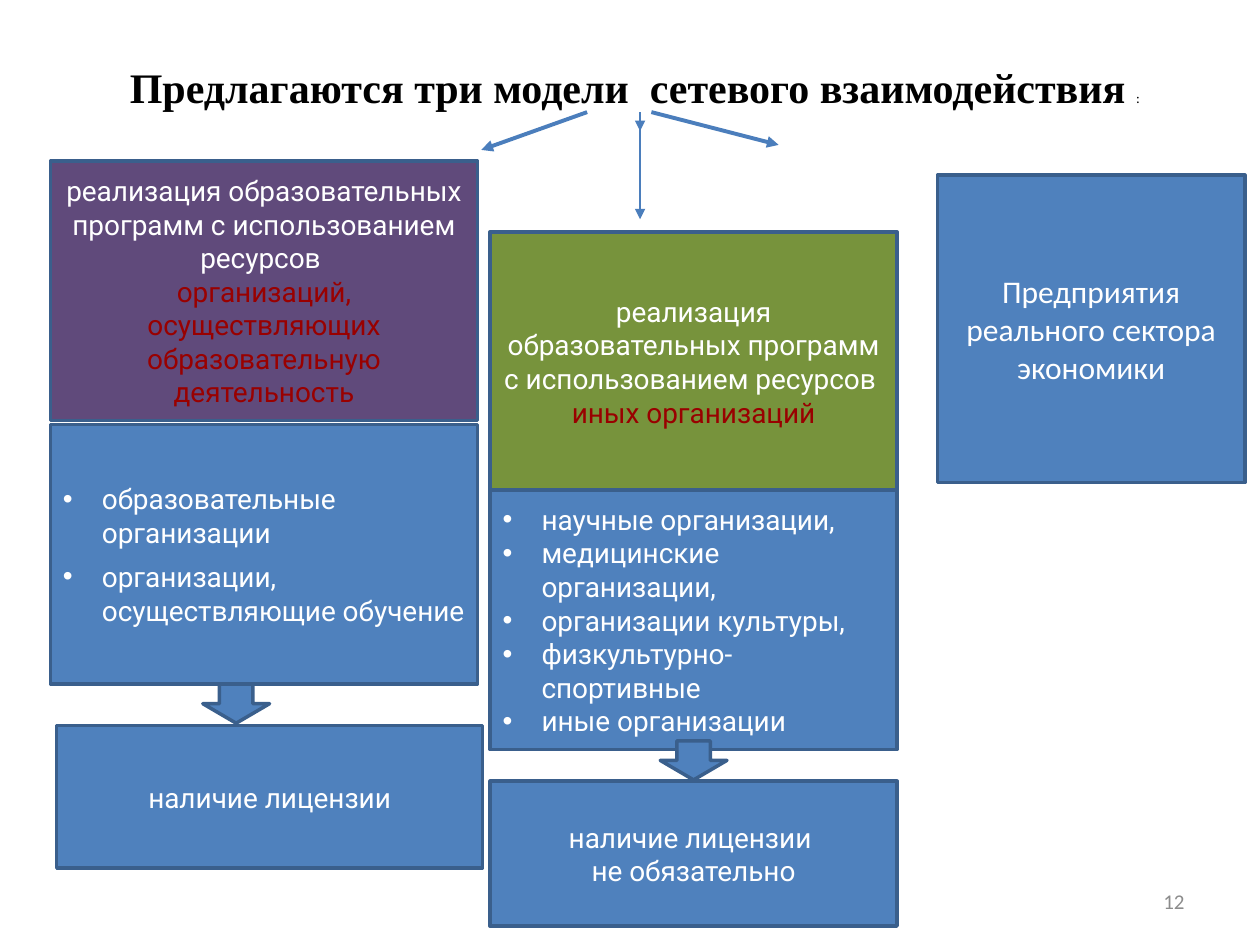
from dataclasses import dataclass

from lxml.etree import SubElement
from pptx import Presentation
from pptx.dml.color import RGBColor
from pptx.enum.shapes import MSO_CONNECTOR, MSO_SHAPE
from pptx.enum.text import MSO_ANCHOR, MSO_AUTO_SIZE, PP_ALIGN
from pptx.oxml.ns import qn
from pptx.util import Inches, Pt

COLS, ROWS = 100, 75
BLUE, EDGE, WIRE = "4F81BD", "3A5F8C", "4B7EBC"
WHITE, RED, BLACK, GREY = "FFFFFF", "990000", "000000", "8C8C8C"

deck = Presentation()
deck.slide_width, deck.slide_height = Inches(10), Inches(7.5)
slide = deck.slides.add_slide(deck.slide_layouts[5])
shapes = slide.shapes


@dataclass
class Run:
    text: str
    color: str = WHITE
    size: float = 16
    font: str = "Roboto"
    bold: bool = False


@dataclass
class Box:
    """A filled shape; place is left, top, width and height in grid cells."""
    place: tuple
    lines: tuple = ()
    fill: str = BLUE
    kind: MSO_SHAPE = MSO_SHAPE.RECTANGLE
    bullets: bool = False
    gap: float = 0


@dataclass
class Arrow:
    start: tuple
    end: tuple
    width: float


def tint(code: str) -> RGBColor:
    return RGBColor.from_string(code)


def grid(*cells: float) -> list:
    """Turn alternating column and row counts into lengths."""
    units = (deck.slide_width / COLS, deck.slide_height / ROWS)
    return [round(n * units[i % 2]) for i, n in enumerate(cells)]


def write(para, run: Run) -> None:
    part = para.add_run()
    part.text = run.text
    font = part.font
    font.name, font.size, font.bold = run.font, Pt(run.size), run.bold
    font.color.rgb = tint(run.color)


def bullet(para) -> None:
    props = para._p.get_or_add_pPr()
    indent = Inches(0.31)
    props.set("marL", str(indent))
    props.set("indent", str(-indent))
    SubElement(props, qn("a:buFont")).set("typeface", "Arial")
    SubElement(props, qn("a:buChar")).set("char", "•")


def draw_box(box: Box) -> None:
    shape = shapes.add_shape(box.kind, *grid(*box.place))
    shape.shadow.inherit = False
    shape.fill.solid()
    shape.fill.fore_color.rgb = tint(box.fill)
    shape.line.color.rgb = tint(EDGE)
    shape.line.width = Pt(2)
    frame = shape.text_frame
    frame.word_wrap = True
    frame.vertical_anchor = MSO_ANCHOR.MIDDLE
    for i, run in enumerate(box.lines):
        para = frame.add_paragraph() if i else frame.paragraphs[0]
        para.alignment = PP_ALIGN.LEFT if box.bullets else PP_ALIGN.CENTER
        if box.gap and i < len(box.lines) - 1:
            para.space_after = Pt(box.gap)
        if box.bullets:
            bullet(para)
        write(para, run)


def draw_arrow(arrow: Arrow) -> None:
    line = shapes.add_connector(
        MSO_CONNECTOR.STRAIGHT, *grid(*arrow.start, *arrow.end))
    line.line.color.rgb = tint(WIRE)
    line.line.width = Pt(arrow.width)
    SubElement(line.line._get_or_add_ln(), qn("a:tailEnd")).set("type", "triangle")
    SubElement(line._element.spPr, qn("a:effectLst"))


def draw_title() -> None:
    title = shapes.title
    title.left, title.top, title.width, title.height = grid(9.3, 2.1, 87.4, 6.5)
    frame = title.text_frame
    frame.auto_size = MSO_AUTO_SIZE.NONE
    frame.word_wrap = True
    frame.vertical_anchor = MSO_ANCHOR.TOP
    frame.margin_top = Inches(0.28)
    para = frame.paragraphs[0]
    para.alignment = PP_ALIGN.LEFT
    write(para, Run("Предлагаются три модели  сетевого взаимодействия ",
                    BLACK, 24, "Times New Roman", True))
    write(para, Run(":", BLACK, 8, "Calibri"))


def draw_page() -> None:
    frame = shapes.add_textbox(*grid(71.7, 69.5, 23.3, 4)).text_frame
    frame.word_wrap = True
    frame.vertical_anchor = MSO_ANCHOR.MIDDLE
    para = frame.paragraphs[0]
    para.alignment = PP_ALIGN.RIGHT
    write(para, Run("12", GREY, 12, "Calibri"))


LEFT, LWIDE = 4, 33.9
MID, MWIDE = 38.9, 32.3
TALL = 20.6
USE = "реализация образовательных программ с использованием ресурсов "
DOWN = MSO_SHAPE.DOWN_ARROW

BOXES = (
    Box((LEFT, 12.8, LWIDE, TALL),
        (Run(USE), Run("организаций, осуществляющих образовательную деятельность", RED)),
        "604A7B"),
    Box((MID, 18.4, MWIDE, TALL), (Run(USE), Run("иных организаций", RED)), "77933C"),
    Box((MID, 38.9, MWIDE, TALL),
        (Run("научные организации,"), Run("медицинские организации,"),
         Run("организации культуры,"), Run("физкультурно-спортивные"),
         Run("иные организации")), bullets=True),
    Box((LEFT, 33.7, LWIDE, TALL),
        (Run("образовательные организации"),
         Run("организации, осуществляющие обучение")), bullets=True, gap=6),
    Box((16.1, 54.3, 5.3, 3.1), kind=DOWN),
    Box((52.4, 58.8, 5.3, 3.1), kind=DOWN),
    Box((4.5, 57.6, 33.8, 11.3), (Run("наличие лицензии"),)),
    Box((MID, 62, MWIDE, 11.5), (Run("наличие лицензии "), Run("не обязательно"))),
    Box((74.4, 13.9, 24.4, 24.4),
        (Run("Предприятия реального сектора экономики", size=18, font="Calibri"),)),
)

ARROWS = (
    Arrow((51.7, 8.9), (61.8, 11.5), 2.25),
    Arrow((46.6, 8.9), (38.2, 11.9), 2.25),
    Arrow((50.8, 9.6), (50.8, 10.4), 0.75),
    Arrow((50.8, 8.9), (50.8, 17.4), 0.75),
)

draw_page()
draw_title()
for box in BOXES:
    draw_box(box)
for arrow in ARROWS:
    draw_arrow(arrow)
deck.save("out.pptx")
